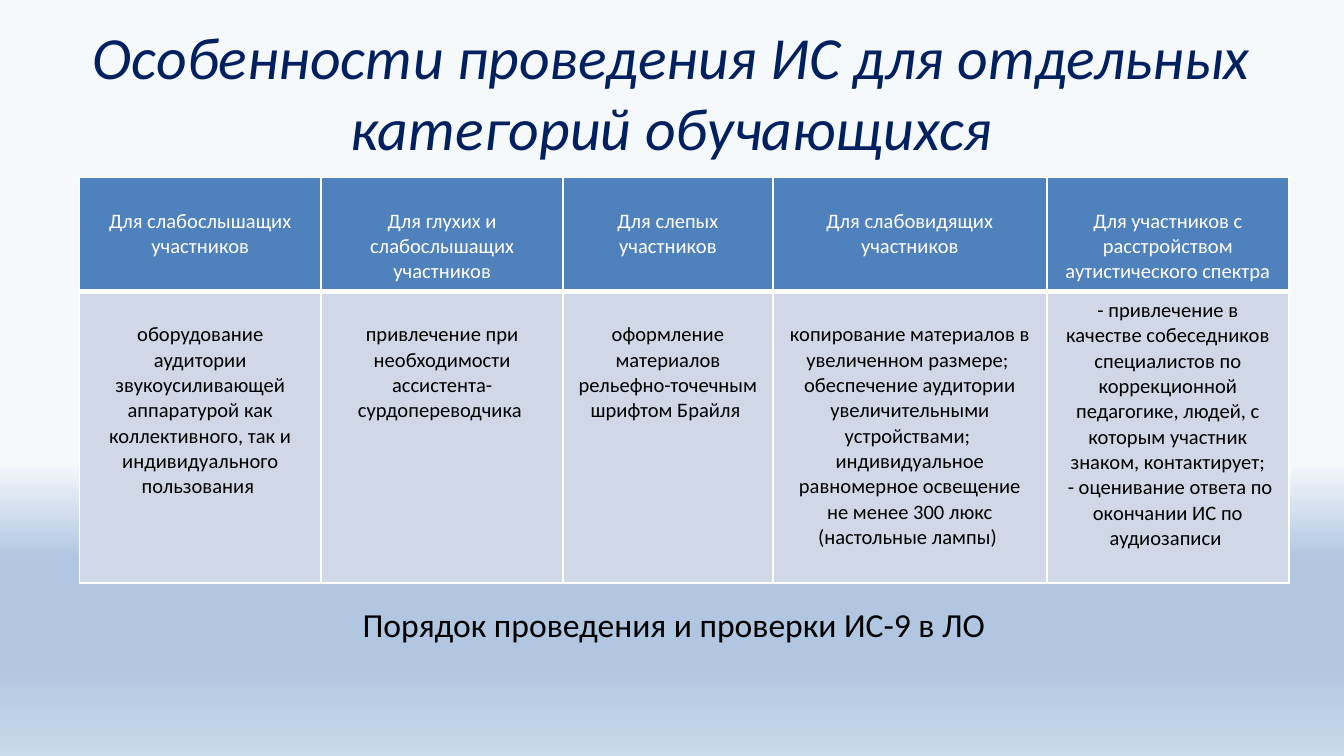
from lxml.etree import SubElement
from pptx import Presentation
from pptx.dml.color import RGBColor
from pptx.enum.text import MSO_ANCHOR as Anchor, PP_ALIGN as Align
from pptx.oxml.ns import qn
from pptx.util import Inches, Pt

WIDTH = 10
HEIGHT = WIDTH * 9 / 16
FONT = "Calibri"
COLORS = {
    "title": "002060",
    "text": "000000",
    "white": "FFFFFF",
    "header": "4F81BD",
    "body": "D0D8E8",
}
BACKGROUND_STOPS = [(61, "F6F9FC"), (74, "B0C6E1"), (88, "B0C6E1"), (100, "CAD9EB")]
COLUMN_WIDTHS = [1.8, 1.8, 1.56, 2.04, 1.8]
ROW_HEIGHTS = [0.84, 2.17]
CELL_MARGIN = 0.05
LINE_HEIGHT = 0.18
HEADERS = [
    "Для слабослышащих участников",
    "Для глухих и слабослышащих участников",
    "Для слепых участников",
    "Для слабовидящих участников",
    "Для участников с расстройством аутистического спектра",
]
MEASURES = [
    "оборудование аудитории звукоусиливающей аппаратурой как коллективного, "
    "так и индивидуального пользования ",
    "привлечение при необходимости ассистента-сурдопереводчика ",
    "оформление материалов рельефно-точечным шрифтом Брайля ",
    "копирование материалов в увеличенном размере; \n"
    "обеспечение аудитории увеличительными устройствами; \n"
    "индивидуальное равномерное освещение не менее 300 люкс (настольные лампы) ",
    "- привлечение в качестве собеседников специалистов по коррекционной "
    "педагогике, людей, с которым участник знаком, контактирует;\n"
    " - оценивание ответа по окончании ИС по аудиозаписи ",
]


def paint_background(page):
    fill = page.background.fill
    fill.gradient()
    fill.gradient_angle = 270
    stops = page.element.find(".//" + qn("a:gsLst"))
    for stop in list(stops):
        stops.remove(stop)
    for percent, color in BACKGROUND_STOPS:
        stop = SubElement(stops, qn("a:gs"), pos=str(percent * 1000))
        SubElement(stop, qn("a:srgbClr"), val=color)


def write_text(frame, text, size, color, align=Align.CENTER, italic=False):
    frame.text = text
    frame.word_wrap = True
    for para in frame.paragraphs:
        para.alignment = align
        for span in para.runs:
            font = span.font
            font.name, font.size = FONT, Pt(size)
            font.bold, font.italic = False, italic
            font.color.rgb = RGBColor.from_string(COLORS[color])


def add_text(page, left, top, width, height, text, size, color, **style):
    """Add a text box placed by shares of the slide's size."""
    box = page.shapes.add_textbox(
        Inches(left * WIDTH), Inches(top * HEIGHT),
        Inches(width * WIDTH), Inches(height * HEIGHT))
    write_text(box.text_frame, text, size, color, **style)
    return box


def add_borders(cell, bottom):
    """Draw thin white edges, with the given bottom width in points."""
    properties = cell._tc.get_or_add_tcPr()
    for side, points in zip("LRTB", (1, 1, 1, bottom)):
        line = SubElement(properties, qn("a:ln" + side), w=str(Pt(points)))
        solid = SubElement(line, qn("a:solidFill"))
        SubElement(solid, qn("a:srgbClr"), val=COLORS["white"])


def fill_cell(cell, text, fill, color, bottom, lowered):
    """Style one cell; a lowered cell starts its text one line further down."""
    add_borders(cell, bottom)
    cell.fill.solid()
    cell.fill.fore_color.rgb = RGBColor.from_string(COLORS[fill])
    cell.margin_top = Inches(CELL_MARGIN + LINE_HEIGHT * lowered)
    cell.margin_bottom = Inches(CELL_MARGIN)
    write_text(cell.text_frame, text, 11, color)


def add_category_table(page):
    table = page.shapes.add_table(
        len(ROW_HEIGHTS), len(COLUMN_WIDTHS), Inches(0.59), Inches(1.32),
        Inches(sum(COLUMN_WIDTHS)), Inches(sum(ROW_HEIGHTS))).table
    for column, width in zip(table.columns, COLUMN_WIDTHS):
        column.width = Inches(width)
    for row, height in zip(table.rows, ROW_HEIGHTS):
        row.height = Inches(height)
    last = len(COLUMN_WIDTHS) - 1
    for index, (header, measure) in enumerate(zip(HEADERS, MEASURES)):
        fill_cell(table.cell(0, index), header, "header", "white", 3, True)
        fill_cell(table.cell(1, index), measure, "body", "text", 1, index < last)


def main():
    deck = Presentation()
    deck.slide_width, deck.slide_height = Inches(WIDTH), Inches(HEIGHT)
    page = deck.slides.add_slide(deck.slide_layouts[6])
    paint_background(page)
    add_category_table(page)
    title = add_text(page, 0.05, 0.04, 0.9, 0.17,
                     "Особенности проведения ИС для отдельных категорий обучающихся",
                     32, "title", italic=True)
    title.text_frame.vertical_anchor = Anchor.MIDDLE
    title.text_frame.margin_top = 0
    add_text(page, 0.26, 0.79, 0.49, 0.07,
             "Порядок проведения и проверки ИС-9 в ЛО", 18, "text", align=Align.LEFT)
    deck.save("out.pptx")


if __name__ == "__main__":
    main()
